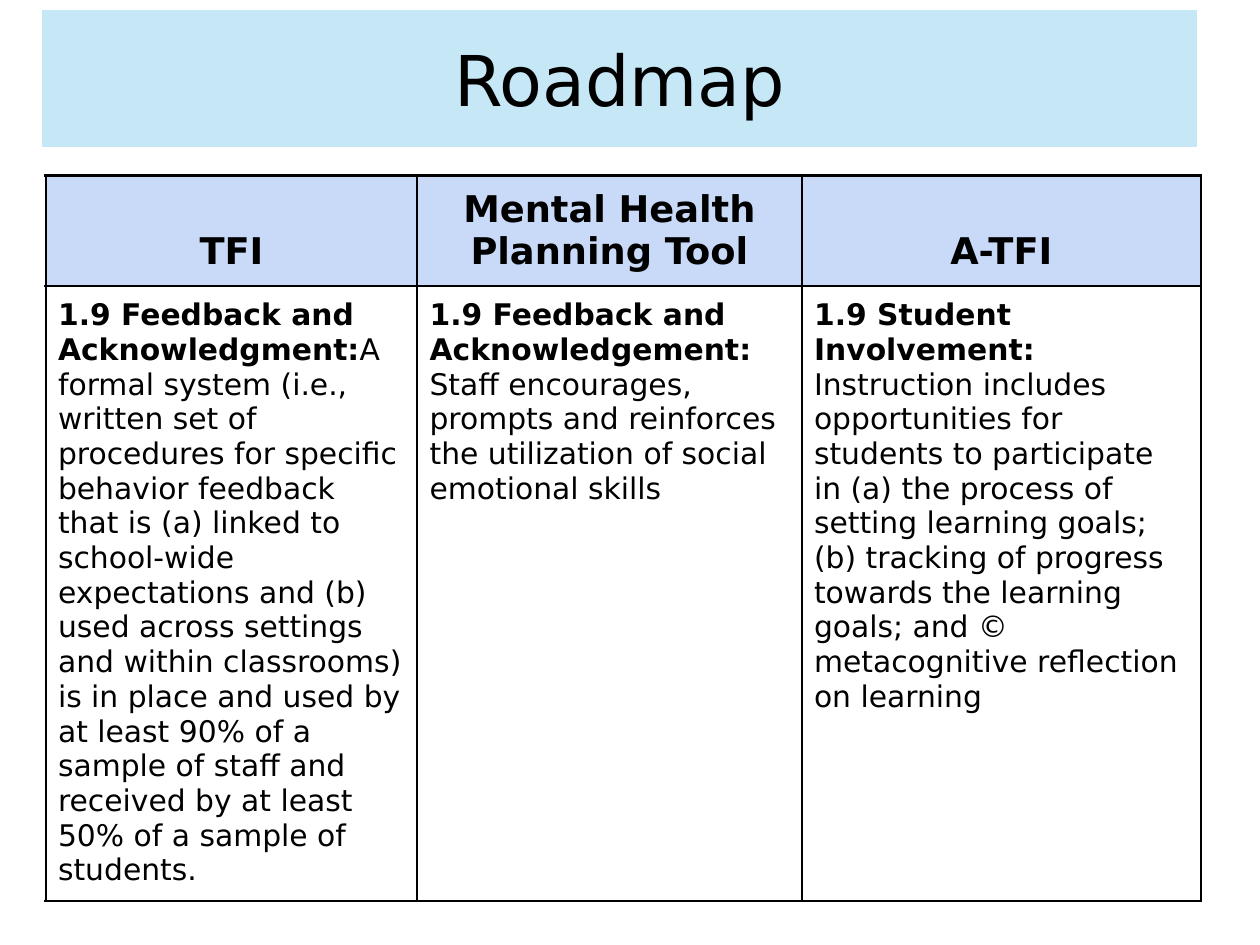
from dataclasses import dataclass

import lxml.etree
import pptx
import pptx.dml.color
import pptx.enum.shapes
import pptx.enum.text
import pptx.oxml.ns
import pptx.slide
import pptx.table
import pptx.text.text
import pptx.util
from pptx.util import Cm


@dataclass(frozen=True)
class Theme:
    font: str = "DejaVu Sans"
    ink: str = "000000"
    paper: str = "FFFFFF"
    banner: str = "A9DCF2"
    banner_opacity: int = 67
    header: str = "C9DAF8"
    title_size: int = 40
    header_size: int = 21
    body_size: int = 17
    border: float = 1.5
    outline: float = 0.75


@dataclass(frozen=True)
class Tool:
    name: str
    width: float
    item: str
    description: str
    same_paragraph: bool = True


THEME = Theme()
TOOLS = [
    Tool(
        "TFI", 7.49, "1.9 Feedback and Acknowledgment:",
        "A formal system (i.e., written set of procedures for specific behavior "
        "feedback that is (a) linked to school-wide expectations and (b) used across "
        "settings and within classrooms) is in place and used by at least 90% of a "
        "sample of staff and received by at least 50% of a sample of students.",
    ),
    Tool(
        "Mental Health Planning Tool", 7.75, "1.9 Feedback and Acknowledgement: ",
        "Staff encourages, prompts and reinforces the utilization of social "
        "emotional skills",
    ),
    Tool(
        "A-TFI", 8.05, "1.9 Student Involvement:",
        "Instruction includes opportunities for students to participate in (a) the "
        "process of setting learning goals; (b) tracking of progress towards the "
        "learning goals; and © metacognitive reflection on learning",
        same_paragraph=False,
    ),
]
ROW_HEIGHTS = (2.21, 12.4)


def rgb(value: str) -> pptx.dml.color.RGBColor:
    return pptx.dml.color.RGBColor.from_string(value)


def style_runs(paragraph: pptx.text.text._Paragraph, size: int, bold: bool = False) -> None:
    for run in paragraph.runs:
        run.font.name = THEME.font
        run.font.size = pptx.util.Pt(size)
        run.font.bold = bold
        run.font.color.rgb = rgb(THEME.ink)


def style_cell(cell: pptx.table._Cell, fill: str) -> None:
    properties = cell._tc.get_or_add_tcPr()
    qn = pptx.oxml.ns.qn
    for side in ("lnL", "lnR", "lnT", "lnB"):
        edge = lxml.etree.SubElement(
            properties, qn(f"a:{side}"), w=str(pptx.util.Pt(THEME.border))
        )
        solid = lxml.etree.SubElement(edge, qn("a:solidFill"))
        lxml.etree.SubElement(solid, qn("a:srgbClr"), val=THEME.ink)
    cell.fill.solid()
    cell.fill.fore_color.rgb = rgb(fill)
    cell.margin_left = cell.margin_right = Cm(0.25)
    cell.margin_top = cell.margin_bottom = Cm(0.25)


def draw_header(cell: pptx.table._Cell, tool: Tool) -> None:
    style_cell(cell, THEME.header)
    cell.vertical_anchor = pptx.enum.text.MSO_ANCHOR.BOTTOM
    cell.text_frame.text = tool.name
    heading = cell.text_frame.paragraphs[0]
    heading.alignment = pptx.enum.text.PP_ALIGN.CENTER
    style_runs(heading, THEME.header_size, bold=True)


def draw_body(cell: pptx.table._Cell, tool: Tool) -> None:
    style_cell(cell, THEME.paper)
    frame = cell.text_frame
    frame.text = tool.item
    item = frame.paragraphs[0]
    description = item if tool.same_paragraph else frame.add_paragraph()
    description.add_run().text = tool.description
    for paragraph in frame.paragraphs:
        style_runs(paragraph, THEME.body_size)
    item.runs[0].font.bold = True


def draw_comparison(slide: pptx.slide.Slide) -> None:
    comparison = slide.shapes.add_table(
        len(ROW_HEIGHTS), len(TOOLS), Cm(0.92), Cm(3.54),
        Cm(sum(tool.width for tool in TOOLS)), Cm(sum(ROW_HEIGHTS)),
    ).table
    comparison.first_row = False
    comparison.horz_banding = False
    for row, height in zip(comparison.rows, ROW_HEIGHTS):
        row.height = Cm(height)
    for index, tool in enumerate(TOOLS):
        comparison.columns[index].width = Cm(tool.width)
        draw_header(comparison.cell(0, index), tool)
        draw_body(comparison.cell(1, index), tool)


def draw_banner(slide: pptx.slide.Slide, title: str) -> None:
    banner = slide.shapes.add_shape(
        pptx.enum.shapes.MSO_SHAPE.RECTANGLE, Cm(0.84), Cm(0.19), Cm(23.3), Cm(2.78)
    )
    banner.shadow.inherit = False
    banner.fill.solid()
    banner.fill.fore_color.rgb = rgb(THEME.banner)
    tint = banner._element.spPr.find(".//" + pptx.oxml.ns.qn("a:srgbClr"))
    lxml.etree.SubElement(
        tint, pptx.oxml.ns.qn("a:alpha"), val=str(THEME.banner_opacity * 1000)
    )
    banner.line.color.rgb = rgb(THEME.paper)
    banner.line.width = pptx.util.Pt(THEME.outline)
    frame = banner.text_frame
    frame.word_wrap = True
    frame.vertical_anchor = pptx.enum.text.MSO_ANCHOR.MIDDLE
    frame.text = title
    frame.paragraphs[0].alignment = pptx.enum.text.PP_ALIGN.CENTER
    style_runs(frame.paragraphs[0], THEME.title_size)


def main() -> None:
    presentation = pptx.Presentation()
    presentation.slide_width = Cm(25.4)
    presentation.slide_height = Cm(19.05)
    slide = presentation.slides.add_slide(presentation.slide_layouts[6])
    draw_comparison(slide)
    draw_banner(slide, "Roadmap")
    presentation.save("out.pptx")


if __name__ == "__main__":
    main()
